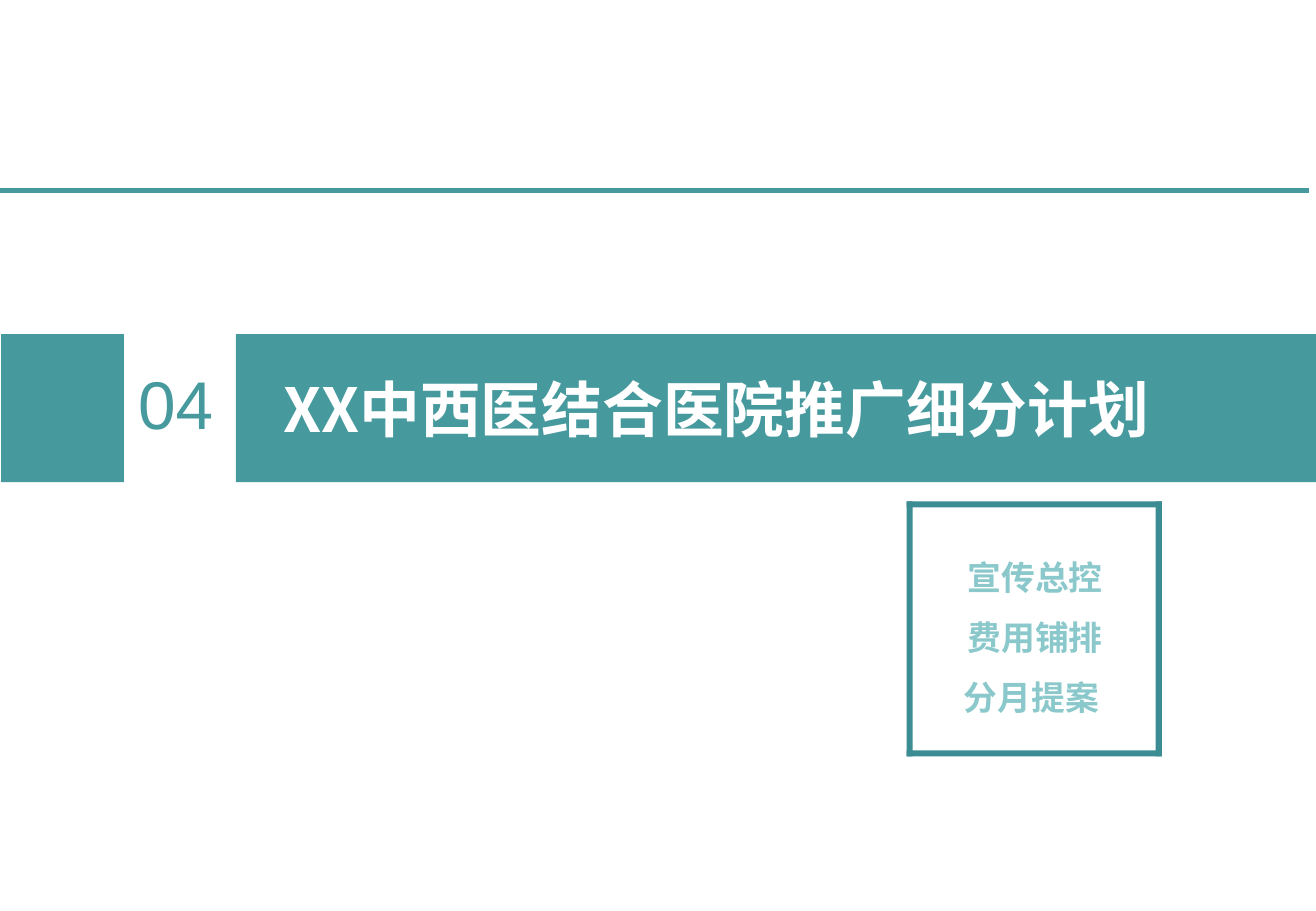
"""Build the section divider slide for part 04 of the hospital promotion plan."""
from dataclasses import dataclass

from lxml.etree import SubElement
from pptx import Presentation
from pptx.dml.color import RGBColor
from pptx.enum.shapes import MSO_CONNECTOR, MSO_SHAPE
from pptx.enum.text import MSO_ANCHOR, MSO_AUTO_SIZE, PP_ALIGN
from pptx.oxml.ns import qn
from pptx.util import Pt

SECTION_TITLE = "XX中西医结合医院推广细分计划"
SECTION_NUMBER = "04"
TOPICS = ["宣传总控", "费用铺排", "分月提案 "]


@dataclass(frozen=True)
class Theme:
    teal: RGBColor = RGBColor.from_string("46999D")
    dark_teal: RGBColor = RGBColor.from_string("3C8C93")
    pale_teal: RGBColor = RGBColor.from_string("8AC8CB")
    white: RGBColor = RGBColor.from_string("FFFFFF")
    chinese: str = "Noto Sans CJK SC"
    latin: str = "Arial"
    title_size: int = 36
    number_size: int = 40
    topic_size: int = 20


THEME = Theme()
SLIDE_W, SLIDE_H = 779.76, 540
BAND_TOP, BAND_H = 198, 87.8
BLOCK_LEFT, BLOCK_W = 0.7, 72.7
NUMBER_LEFT, NUMBER_W = 73.4, 61.2
TITLE_LEFT = 139.7
RULE_Y, RULE_END, RULE_WEIGHT = 113, 775.4, 3
FRAME_LEFT, FRAME_TOP, FRAME_SIDE, FRAME_WEIGHT = 537.2, 297.2, 151.2, 3.6
TOPICS_BOX = (526.3, 315, 174.2, 115.2)
TOPIC_PITCH = 35.6


def apply(target, values):
    for key, value in values.items():
        setattr(target, key, value)


def place(shape, left, top, width, height):
    apply(shape, {"left": Pt(left), "top": Pt(top), "width": Pt(width), "height": Pt(height)})


def paint(shape, color):
    shape.fill.solid()
    shape.fill.fore_color.rgb = color


def add_bar(slide, box, color):
    bar = slide.shapes.add_shape(MSO_SHAPE.RECTANGLE, *map(Pt, box))
    paint(bar, color)
    bar.line.fill.background()
    bar.shadow.inherit = False


def write(shape, lines, face, size, color, bold, insets, anchor, paragraph_format):
    frame = shape.text_frame
    left, top, right, bottom = map(Pt, insets)
    apply(frame, {"word_wrap": True, "auto_size": MSO_AUTO_SIZE.NONE, "vertical_anchor": anchor,
                  "margin_left": left, "margin_top": top,
                  "margin_right": right, "margin_bottom": bottom})
    frame.text = "\n".join(lines)
    for paragraph in frame.paragraphs:
        apply(paragraph, {"space_before": Pt(0), **paragraph_format})
        for run in paragraph.runs:
            apply(run.font, {"name": face, "size": Pt(size), "bold": bold})
            run.font.color.rgb = color
            SubElement(run.font._element, qn("a:ea")).set("typeface", face)


def remove_bullets(shape):
    for paragraph in shape.text_frame.paragraphs:
        properties = paragraph._p.get_or_add_pPr()
        properties.set("marL", "0")
        properties.set("indent", "0")
        SubElement(properties, qn("a:buNone"))


def add_rule(slide):
    rule = slide.shapes.add_connector(
        MSO_CONNECTOR.STRAIGHT, Pt(0), Pt(RULE_Y), Pt(RULE_END), Pt(RULE_Y))
    rule.line.color.rgb = THEME.teal
    rule.line.width = Pt(RULE_WEIGHT)
    SubElement(rule._element.spPr, qn("a:effectLst"))


def add_frame(slide):
    offset = FRAME_SIDE - FRAME_WEIGHT
    for shift in (0, offset):
        add_bar(slide, (FRAME_LEFT, FRAME_TOP + shift, FRAME_SIDE, FRAME_WEIGHT), THEME.dark_teal)
        add_bar(slide, (FRAME_LEFT + shift, FRAME_TOP, FRAME_WEIGHT, FRAME_SIDE), THEME.dark_teal)


def main():
    deck = Presentation()
    apply(deck, {"slide_width": Pt(SLIDE_W), "slide_height": Pt(SLIDE_H)})
    slide = deck.slides.add_slide(deck.slide_layouts[1])
    title, topics = slide.placeholders

    place(title, TITLE_LEFT, BAND_TOP, SLIDE_W - TITLE_LEFT, BAND_H)
    paint(title, THEME.teal)
    write(title, [SECTION_TITLE], THEME.chinese, THEME.title_size, THEME.white, True,
          (28.1, 3.6, 7.2, 3.6), MSO_ANCHOR.MIDDLE, {"alignment": PP_ALIGN.JUSTIFY})

    add_bar(slide, (BLOCK_LEFT, BAND_TOP, BLOCK_W, BAND_H), THEME.teal)
    number = slide.shapes.add_textbox(*map(Pt, (NUMBER_LEFT, BAND_TOP, NUMBER_W, BAND_H)))
    write(number, [SECTION_NUMBER], THEME.latin, THEME.number_size, THEME.teal, False,
          (0, 0, 0, 0), MSO_ANCHOR.MIDDLE,
          {"alignment": PP_ALIGN.CENTER, "line_spacing": 0.9})

    add_rule(slide)
    add_frame(slide)
    place(topics, *TOPICS_BOX)
    write(topics, TOPICS, THEME.chinese, THEME.topic_size, THEME.pale_teal, True,
          (7.2, 3.6, 7.2, 3.6), MSO_ANCHOR.TOP,
          {"alignment": PP_ALIGN.CENTER, "line_spacing": Pt(TOPIC_PITCH)})
    remove_bullets(topics)
    deck.save("out.pptx")


if __name__ == "__main__":
    main()
